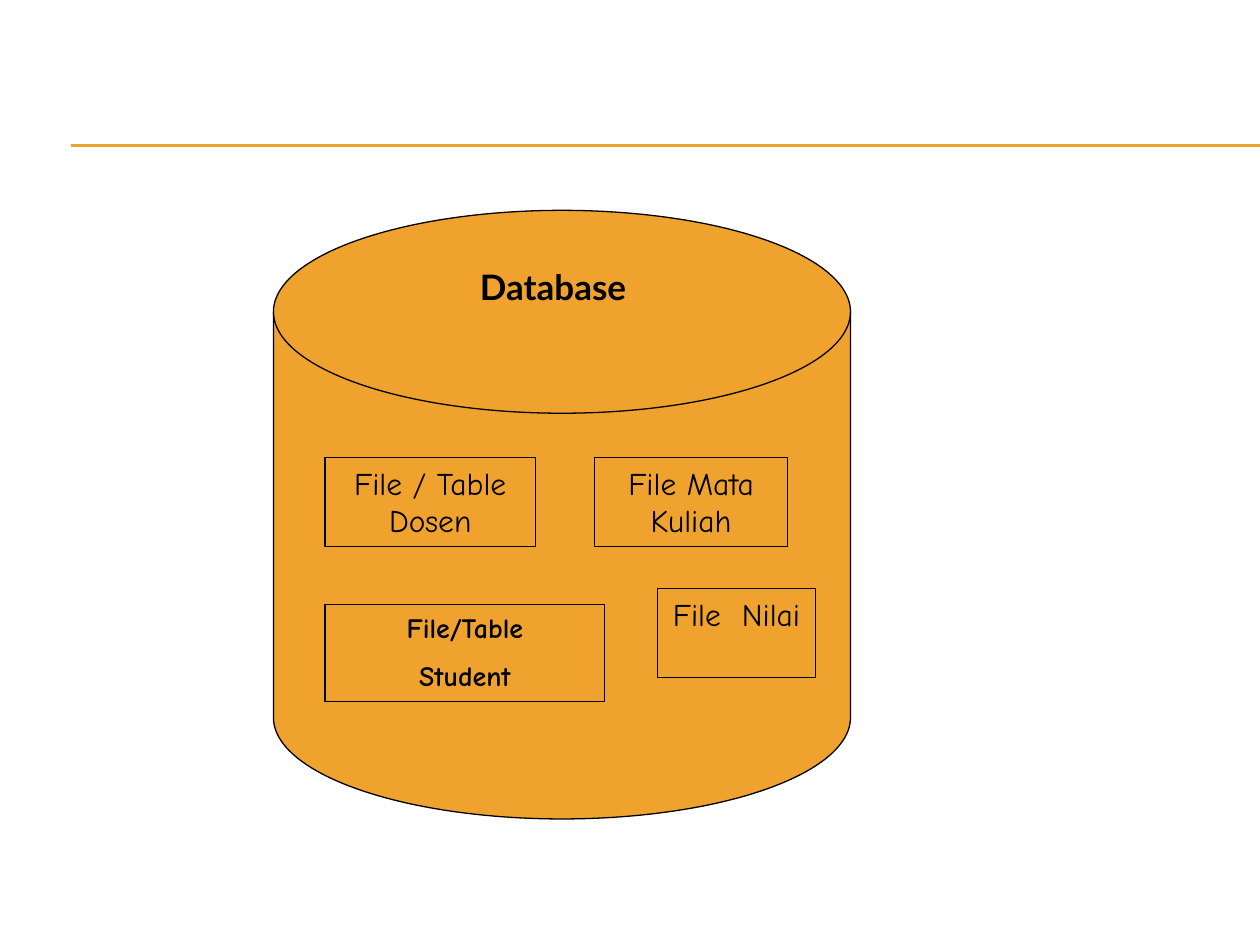
from pptx import Presentation
from pptx.dml.color import RGBColor
from pptx.enum.shapes import MSO_CONNECTOR, MSO_SHAPE
from pptx.enum.text import MSO_ANCHOR, MSO_AUTO_SIZE, PP_ALIGN
from pptx.oxml.ns import qn
from pptx.util import Inches, Pt
from lxml import etree

COLORS = {"accent": "F0A22E", "ink": "000000"}
LINE_WIDTH = Pt(0.75)

# Offsets from the cylinder: left, top, width, height, lines, font format
TITLE = (0.69, 0.39, 3.06, 0.68, ["Database"],
         {"name": "Lato", "size": Pt(20), "bold": True})
PLAIN = {"name": "Comic Neue", "size": Pt(18), "bold": False}
STRONG = {"name": "Comic Neue", "size": Pt(16), "bold": True}
FILES = [
    (0.41, 3.13, 2.22, 0.77, ["File/Table", "Student"], STRONG),
    (0.41, 1.96, 1.67, 0.71, ["File / Table Dosen"], PLAIN),
    (2.55, 1.96, 1.53, 0.71, ["File Mata Kuliah"], PLAIN),
    (3.05, 3.00, 1.25, 0.71, ["File  Nilai"], PLAIN),
]


def rgb(key):
    return RGBColor.from_string(COLORS[key])


def outline(shape, key):
    shape.line.color.rgb = rgb(key)
    shape.line.width = LINE_WIDTH


def write(shape, lines, font):
    tf = shape.text_frame
    tf.word_wrap = True
    tf.auto_size = MSO_AUTO_SIZE.SHAPE_TO_FIT_TEXT
    tf.vertical_anchor = MSO_ANCHOR.TOP
    for i, line in enumerate(lines):
        p = tf.paragraphs[0] if i == 0 else tf.add_paragraph()
        p.alignment = PP_ALIGN.CENTER
        p.space_before = Pt(font["size"].pt / 2)
        r = p.add_run()
        r.text = line
        for name, value in font.items():
            setattr(r.font, name, value)
        r.font.color.rgb = rgb("ink")


def add_header_rule(s, left, top, right):
    # Two hairlines, one just below the other
    for y in (top, top + 0.01):
        rule = s.shapes.add_connector(MSO_CONNECTOR.STRAIGHT, Inches(left),
                                      Inches(y), Inches(right), Inches(y))
        outline(rule, "accent")
        etree.SubElement(rule._element.spPr, qn("a:effectLst"))


def add_database(s, left, top, width, height):
    group = s.shapes.add_group_shape()

    # Cylinder
    disk = group.shapes.add_shape(MSO_SHAPE.FLOWCHART_MAGNETIC_DISK, Inches(left),
                                  Inches(top), Inches(width), Inches(height))
    disk.shadow.inherit = False
    disk.fill.solid()
    disk.fill.fore_color.rgb = rgb("accent")
    outline(disk, "ink")

    # Title on the lid
    x, y, w, h, lines, font = TITLE
    title = group.shapes.add_textbox(Inches(left + x), Inches(top + y),
                                     Inches(w), Inches(h))
    write(title, lines, font)

    # Files stored inside
    for x, y, w, h, lines, font in FILES:
        box = group.shapes.add_shape(MSO_SHAPE.RECTANGLE, Inches(left + x),
                                     Inches(top + y), Inches(w), Inches(h))
        box.shadow.inherit = False
        box.fill.background()
        outline(box, "ink")
        write(box, lines, font)


def main():
    prs = Presentation()
    prs.slide_width, prs.slide_height = Inches(10), Inches(7.5)
    s = prs.slides.add_slide(prs.slide_layouts[6])
    add_header_rule(s, 0.56, 1.15, 10)
    add_database(s, 2.17, 1.67, 4.58, 4.83)
    prs.save("out.pptx")


if __name__ == "__main__":
    main()
